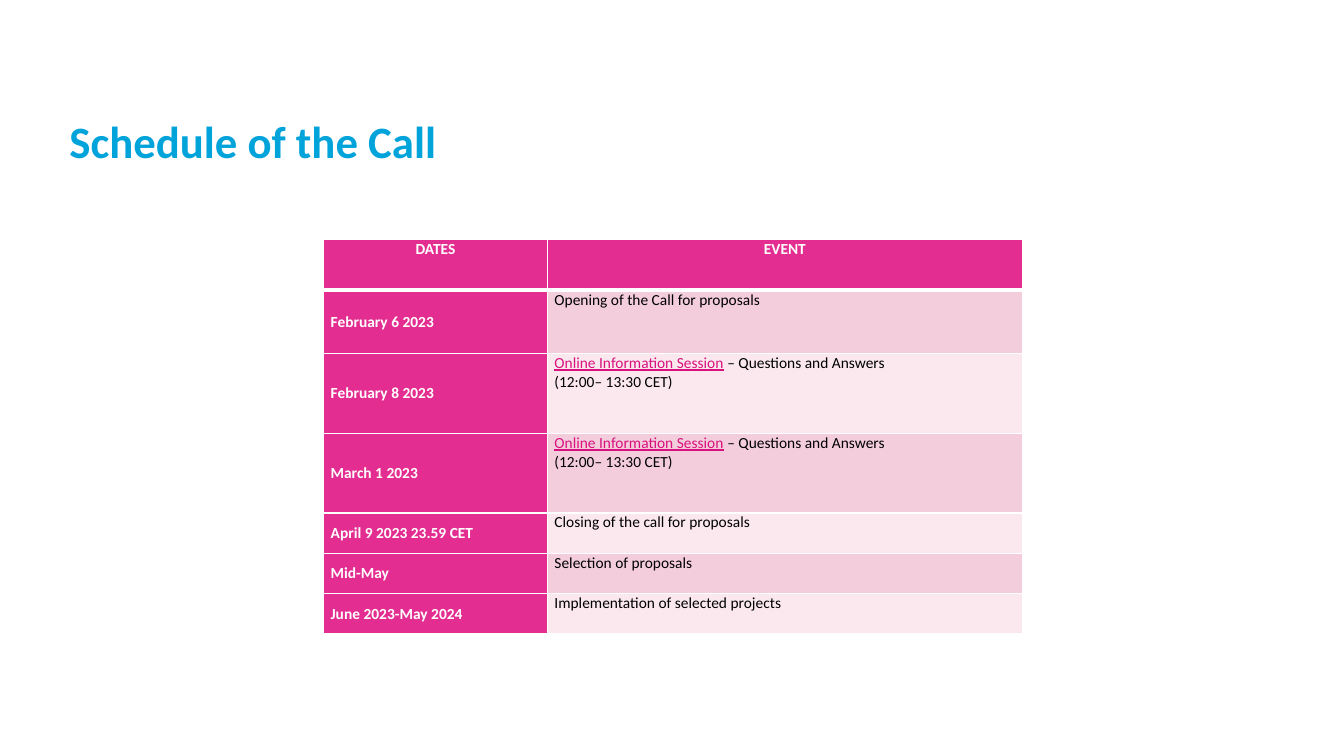
from lxml.etree import SubElement
from pptx import Presentation
from pptx.dml.color import RGBColor
from pptx.enum.text import MSO_ANCHOR, PP_ALIGN
from pptx.oxml.ns import qn
from pptx.util import Inches, Pt

WHITE = RGBColor(0xFF, 0xFF, 0xFF)
BLACK = RGBColor(0, 0, 0)
BLUE = RGBColor(0x00, 0xA3, 0xDA)
PINK = RGBColor(0xE3, 0x2D, 0x91)
LINK = RGBColor(0xD8, 0x11, 0x7D)
ROSE = RGBColor(0xF4, 0xCD, 0xDC)
PALE = RGBColor(0xFA, 0xE8, 0xEE)

SESSION = [
    [("Online Information Session", True), (" – Questions and Answers", False)],
    [("(12:00– 13:30 CET)", False)],
]
HEADS = ("DATES", "EVENT")
EVENTS = [
    ("February 6 2023", [[("Opening of the Call for proposals", False)]], 0.63),
    ("February 8 2023", SESSION, 0.79),
    ("March 1 2023", SESSION, 0.79),
    ("April 9 2023 23.59 CET", [[("Closing of the call for proposals", False)]], 0.4),
    ("Mid-May", [[("Selection of proposals", False)]], 0.4),
    ("June 2023-May 2024", [[("Implementation of selected projects", False)]], 0.4),
]


def style(para, size, color, bold):
    font = para.font
    font.name = "Calibri"
    font.size = Pt(size)
    font.bold = bold
    font.color.rgb = color


def add_title(slide, left, top, width, height):
    box = slide.shapes.add_textbox(Inches(left), Inches(top), Inches(width), Inches(height))
    frame = box.text_frame
    frame.word_wrap = True
    frame.vertical_anchor = MSO_ANCHOR.BOTTOM
    para = frame.paragraphs[0]
    para.text = "Schedule of the Call"
    para.line_spacing = 0.9
    style(para, 32, BLUE, True)


def add_edges(cell, top, bottom):
    props = cell._tc.get_or_add_tcPr()
    for side, width in (("L", 1), ("R", 1), ("T", top), ("B", bottom)):
        line = SubElement(props, qn(f"a:ln{side}"), w=str(Pt(width)))
        fill = SubElement(line, qn("a:solidFill"))
        SubElement(fill, qn("a:srgbClr"), val=str(WHITE))


def dress(cell, fill, row):
    add_edges(cell, 3 if row == 1 else 1, 3 if row == 0 else 1)
    cell.fill.solid()
    cell.fill.fore_color.rgb = fill
    cell.margin_left = cell.margin_right = Inches(0.07)
    cell.margin_top = cell.margin_bottom = 0


def fill_head(cell, text, row):
    dress(cell, PINK, row)
    para = cell.text_frame.paragraphs[0]
    para.text = text
    style(para, 11, WHITE, True)
    if row == 0:
        para.alignment = PP_ALIGN.CENTER
    else:
        cell.vertical_anchor = MSO_ANCHOR.MIDDLE


def fill_event(cell, lines, row):
    dress(cell, ROSE if row % 2 else PALE, row)
    frame = cell.text_frame
    for num, parts in enumerate(lines):
        para = frame.add_paragraph() if num else frame.paragraphs[0]
        style(para, 11, BLACK, False)
        for text, linked in parts:
            run = para.add_run()
            run.text = text
            if linked:
                run.font.underline = True
                run.font.color.rgb = LINK


def add_dates(slide, left, top, width, height):
    frame = slide.shapes.add_table(
        len(EVENTS) + 1, 2, Inches(left), Inches(top), Inches(width), Inches(height))
    table = frame.table
    first = 2.22
    table.columns[0].width = Inches(first)
    table.columns[1].width = Inches(width - first)
    table.rows[0].height = Inches(0.5)
    for col, head in enumerate(HEADS):
        fill_head(table.cell(0, col), head, 0)
    for row, (date, lines, tall) in enumerate(EVENTS, 1):
        table.rows[row].height = Inches(tall)
        fill_head(table.cell(row, 0), date, row)
        fill_event(table.cell(row, 1), lines, row)


def main():
    deck = Presentation()
    deck.slide_width = Inches(13.33)
    deck.slide_height = Inches(7.5)
    slide = deck.slides.add_slide(deck.slide_layouts[6])
    add_title(slide, 0.59, 0.73, 12.28, 0.99)
    add_dates(slide, 3.21, 2.38, 6.93, 3.91)
    deck.save("out.pptx")


if __name__ == "__main__":
    main()
